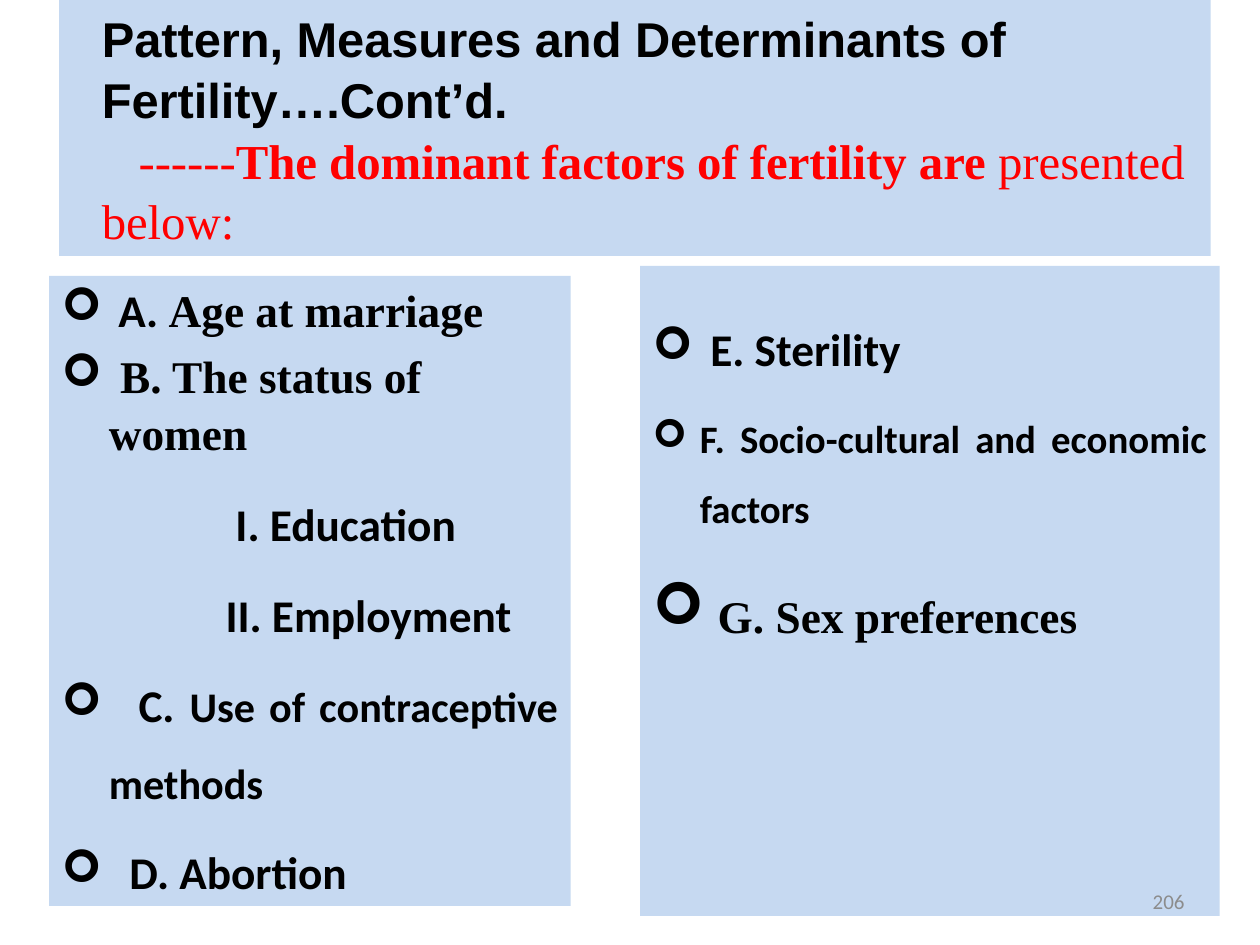
from dataclasses import dataclass

import pptx
import pptx.dml.color
import pptx.enum.shapes
import pptx.enum.text
import pptx.oxml.ns
import pptx.util
from lxml import etree

Pt = pptx.util.Pt
Align = pptx.enum.text.PP_ALIGN
Anchor = pptx.enum.text.MSO_ANCHOR

PANEL_BLUE = pptx.dml.color.RGBColor(0xC6, 0xD9, 0xF1)
BLACK = pptx.dml.color.RGBColor(0, 0, 0)
RED = pptx.dml.color.RGBColor(0xFF, 0, 0)
GREY = pptx.dml.color.RGBColor(0x8C, 0x8C, 0x8C)

SANS, SERIF, HEADING = "Calibri", "Times New Roman", "Arial"
HANGING = 27


@dataclass
class Run:
    text: str
    size: float = 25.9
    font: str = SANS
    bold: bool = True
    color: pptx.dml.color.RGBColor = BLACK


@dataclass
class Line:
    runs: list[Run]
    margin: float = HANGING
    first_indent: float = -HANGING
    bullet: bool = True
    align: Align = Align.JUSTIFY
    spacing: float = 1.5
    before: float = 5.2
    tab: float = 0


@dataclass
class Panel:
    left: float
    top: float
    width: float
    height: float
    lines: list[Line]
    anchor: Anchor = Anchor.TOP
    inset_top: float = 3.6
    filled: bool = True


def format_layout(paragraph, line: Line) -> None:
    """Set the indents, bullet and tab stop of a paragraph."""
    properties = paragraph._p.get_or_add_pPr()
    properties.set("marL", str(Pt(line.margin)))
    properties.set("indent", str(Pt(line.first_indent)))
    qn = pptx.oxml.ns.qn
    if line.bullet:
        etree.SubElement(properties, qn("a:buFont"), typeface="Wingdings")
        etree.SubElement(properties, qn("a:buChar"), char="➢")
    else:
        etree.SubElement(properties, qn("a:buNone"))
    if line.tab:
        tabs = etree.SubElement(properties, qn("a:tabLst"))
        etree.SubElement(tabs, qn("a:tab"), pos=str(Pt(line.tab)), algn="l")


def add_panel(slide, panel: Panel) -> None:
    box = tuple(Pt(v) for v in (panel.left, panel.top, panel.width, panel.height))
    if panel.filled:
        shape = slide.shapes.add_shape(
            pptx.enum.shapes.MSO_SHAPE.RECTANGLE, *box)
        shape.shadow.inherit = False
        shape.fill.solid()
        shape.fill.fore_color.rgb = PANEL_BLUE
        shape.line.fill.background()
    else:
        shape = slide.shapes.add_textbox(*box)
    frame = shape.text_frame
    frame.word_wrap = True
    frame.vertical_anchor = panel.anchor
    frame.margin_left = frame.margin_right = Pt(7.2)
    frame.margin_top, frame.margin_bottom = Pt(panel.inset_top), Pt(3.6)
    for index, line in enumerate(panel.lines):
        paragraph = frame.add_paragraph() if index else frame.paragraphs[0]
        format_layout(paragraph, line)
        paragraph.alignment = line.align
        paragraph.line_spacing = line.spacing
        paragraph.space_before = Pt(line.before if index else 0)
        for part in line.runs:
            run = paragraph.add_run()
            run.text = part.text
            run.font.size = Pt(part.size)
            run.font.name = part.font
            run.font.bold = part.bold
            run.font.color.rgb = part.color


def single(margin: float, *runs: Run, **options) -> Line:
    """A bulleted one-line entry whose text starts at the margin."""
    return Line(list(runs), margin, -margin, **options)


def sub_item(margin: float, text: str) -> Line:
    return Line([Run(text)], margin, 0, bullet=False)


def heading_line(runs: list[Run], first_indent: float = 0) -> Line:
    return Line(runs, 17.3, first_indent, bullet=False, align=Align.LEFT,
                spacing=1.04, before=0)


# Heading
TITLE = Panel(33.8, 0, 658, 146.2, [
    heading_line([Run("Pattern, Measures and Determinants of Fertility….Cont’d.",
                      27.9, HEADING)]),
    heading_line([
        Run("------", 27.9, SERIF, False, RED),
        Run("The dominant factors of fertility are ", 27.9, SERIF, True, RED),
        Run("presented below:", 27.9, SERIF, False, RED)], 21),
], Anchor.MIDDLE)

# Factors A to D
LEFT_FACTORS = Panel(28.1, 157.7, 298.1, 360, [
    single(32.5, Run("A. "), Run("Age at marriage", font=SERIF),
           align=Align.LEFT, spacing=1),
    Line([Run(" B. The status of women", font=SERIF)],
         align=Align.LEFT, spacing=1.05),
    sub_item(99.4, "I. Education"),
    sub_item(93.7, "II. Employment"),
    Line([Run("\tC. "), Run("Use of contraceptive methods", 24.1)], tab=44),
    single(38.8, Run("D. Abortion")),
])

# Factors E to G
RIGHT_FACTORS = Panel(365.8, 151.9, 331.2, 371.5, [
    single(33, Run("E. Sterility")),
    Line([Run("F. Socio-cultural and economic factors", 22.2)], before=9),
    Line([Run(" ", 33.3), Run("G. Sex preferences", font=SERIF)]),
], inset_top=16.2)

# Page number
PAGE_NUMBER = Panel(516.2, 500.4, 167.8, 28.8, [
    Line([Run("206", 12, bold=False, color=GREY)], 0, 0, bullet=False,
         align=Align.RIGHT, spacing=1),
], Anchor.MIDDLE, filled=False)


def main() -> None:
    presentation = pptx.Presentation()
    presentation.slide_width, presentation.slide_height = Pt(720), Pt(540)
    slide = presentation.slides.add_slide(presentation.slide_layouts[6])
    for panel in (TITLE, LEFT_FACTORS, RIGHT_FACTORS, PAGE_NUMBER):
        add_panel(slide, panel)
    presentation.save("out.pptx")


if __name__ == "__main__":
    main()
